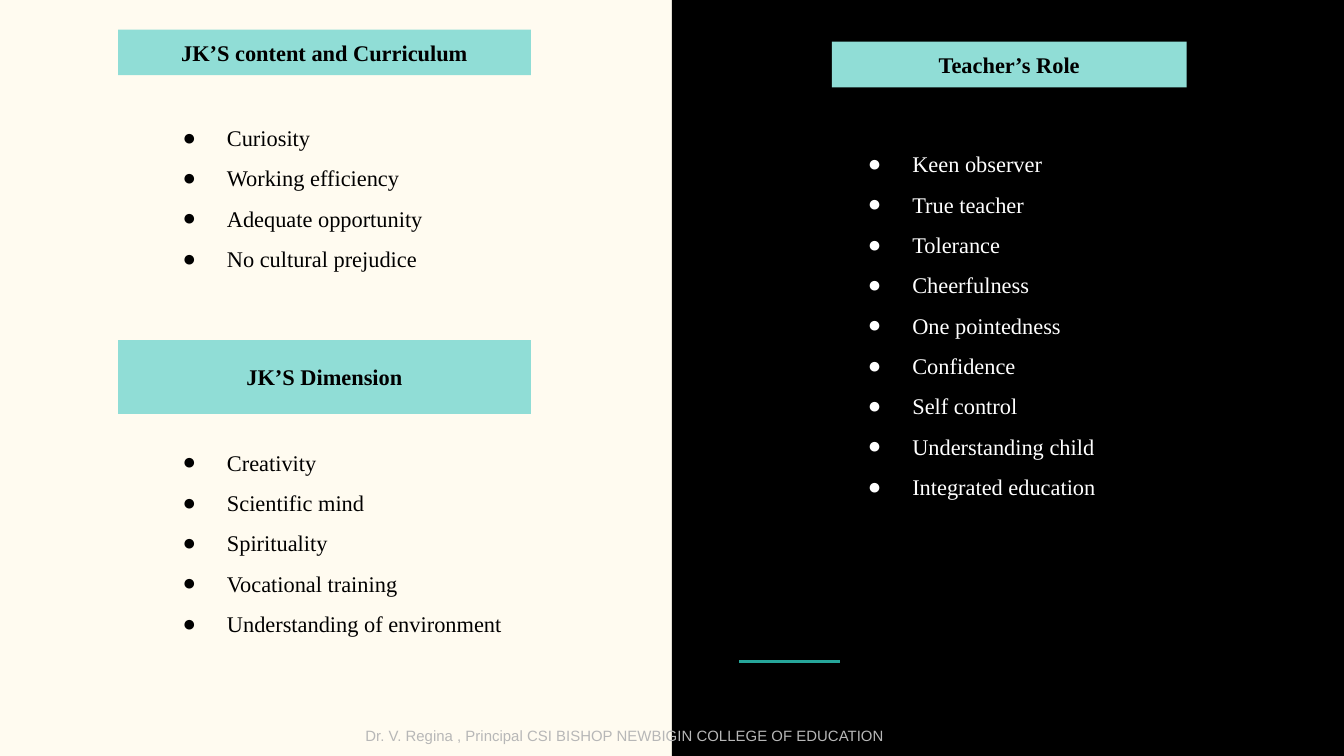
from dataclasses import dataclass

from lxml.etree import SubElement
from pptx import Presentation
from pptx.dml.color import RGBColor
from pptx.enum.shapes import MSO_CONNECTOR as Conn, MSO_SHAPE as Shape
from pptx.enum.text import MSO_ANCHOR as Anchor, PP_ALIGN as Align
from pptx.oxml.ns import qn
from pptx.util import Inches, Pt

CREAM = RGBColor(0xFF, 0xFB, 0xF0)
BLACK = RGBColor(0x00, 0x00, 0x00)
WHITE = RGBColor(0xFF, 0xFF, 0xFF)
MINT = RGBColor(0x90, 0xDD, 0xD6)
TEAL = RGBColor(0x26, 0xA6, 0x9A)
GREY = RGBColor(0xB7, 0xB7, 0xB7)
SERIF, SANS = "Times New Roman", "Arial"
COLS, ROWS = 100, 56.25
WIDTH, HEIGHT = Inches(10), Inches(5.625)


@dataclass(frozen=True)
class Box:
    col: float
    row: float
    cols: float
    rows: float

    def emu(self) -> tuple[int, int, int, int]:
        cw, rh = WIDTH / COLS, HEIGHT / ROWS
        return int(self.col * cw), int(self.row * rh), int(self.cols * cw), int(self.rows * rh)


@dataclass(frozen=True)
class Topic:
    title: str
    head: Box
    body: Box
    items: tuple[str, ...]
    color: RGBColor = BLACK
    anchor: Anchor = Anchor.TOP


TOPICS = (
    Topic("JK’S content and Curriculum", Box(8.8, 2.2, 30.7, 3.4), Box(10.9, 7.4, 29.6, 13.7),
          ("Curiosity", "Working efficiency", "Adequate opportunity", "No cultural prejudice"),
          anchor=Anchor.MIDDLE),
    Topic("Teacher’s Role", Box(61.9, 3.1, 26.4, 3.4), Box(61.9, 9.2, 26.4, 30),
          ("Keen observer", "True teacher", "Tolerance", "Cheerfulness", "One pointedness",
           "Confidence", "Self control", "Understanding child", "Integrated education"), WHITE),
    Topic("JK’S Dimension", Box(8.8, 25.3, 30.7, 5.5), Box(10.9, 31.4, 32.8, 32.8),
          ("Creativity", "Scientific mind", "Spirituality", "Vocational training",
           "Understanding of environment")),
)


def add_block(s, box: Box, fill: RGBColor):
    """Draw a plain filled rectangle."""
    sp = s.shapes.add_shape(Shape.RECTANGLE, *box.emu())
    sp.shadow.inherit = False
    sp.fill.solid()
    sp.fill.fore_color.rgb = fill
    sp.line.fill.background()
    return sp


def write(sp, lines: tuple[str, ...], color: RGBColor, size: float = 12, name: str = SERIF,
          bold: bool = False, align: Align = Align.LEFT, anchor: Anchor = Anchor.TOP) -> list:
    """Fill a shape with one formatted paragraph per line and return the paragraphs."""
    tf = sp.text_frame
    frame = dict(word_wrap=True, vertical_anchor=anchor)
    margins = {f"margin_{side}": Inches(0.1) for side in ("left", "top", "right", "bottom")}
    for key, value in (frame | margins).items():
        setattr(tf, key, value)
    tf.text = "\n".join(lines)
    for p in tf.paragraphs:
        p.alignment = align
        r = p.runs[0]
        for key, value in dict(name=name, size=Pt(size), bold=bold).items():
            setattr(r.font, key, value)
        r.font.color.rgb = color
    return list(tf.paragraphs)


def add_bullet(p, color: RGBColor) -> None:
    """Give a paragraph a hanging round bullet and wide line spacing."""
    p.line_spacing = 1.5
    pPr = p._p.get_or_add_pPr()
    pPr.set("marL", str(Inches(0.5)))
    pPr.set("indent", str(-Inches(0.33)))
    SubElement(SubElement(pPr, qn("a:buClr")), qn("a:srgbClr"), val=str(color))
    SubElement(pPr, qn("a:buFont"), typeface=SERIF)
    SubElement(pPr, qn("a:buChar"), char="●")


def add_topic(s, topic: Topic) -> None:
    """Draw a heading bar and its bulleted list."""
    write(add_block(s, topic.head, MINT), (topic.title,), BLACK, bold=True,
          align=Align.CENTER, anchor=Anchor.MIDDLE)
    body = s.shapes.add_textbox(*topic.body.emu())
    for p in write(body, topic.items, topic.color, anchor=topic.anchor):
        add_bullet(p, topic.color)


def add_accent(s, box: Box) -> None:
    """Draw the short accent line along the top of a box."""
    x, y, w, h = box.emu()
    line = s.shapes.add_connector(Conn.STRAIGHT, x, y, x + w, y + h)
    line.line.color.rgb = TEAL
    line.line.width = Pt(1.5)
    SubElement(line._element.spPr, qn("a:effectLst"))


def main() -> None:
    """Build the slide and save it."""
    prs = Presentation()
    prs.slide_width, prs.slide_height = WIDTH, HEIGHT
    s = prs.slides.add_slide(prs.slide_layouts[6])
    s.background.fill.solid()
    s.background.fill.fore_color.rgb = CREAM
    add_block(s, Box(COLS / 2, 0, COLS / 2, ROWS), BLACK)
    add_accent(s, Box(55, 49.2, 7.5, 0))
    for topic in TOPICS:
        add_topic(s, topic)
    footer = s.shapes.add_textbox(*Box(26.2, 53.4, 54.5, 2.8).emu())
    write(footer, ("Dr. V. Regina , Principal CSI BISHOP NEWBIGIN COLLEGE OF EDUCATION",),
          GREY, size=8, name=SANS)
    prs.save("out.pptx")


if __name__ == "__main__":
    main()
